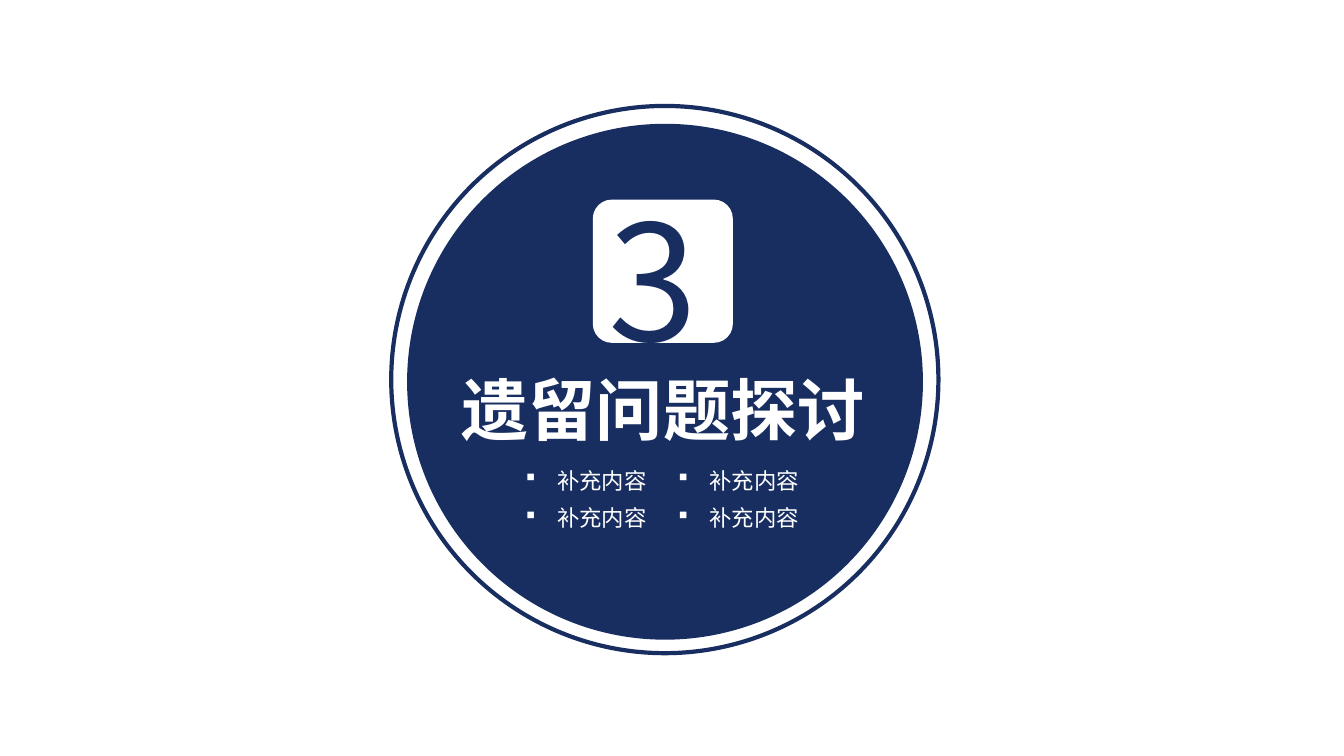
from lxml import etree
from pptx import Presentation
from pptx import util as u
from pptx.dml.color import RGBColor
from pptx.enum import shapes, text
from pptx.oxml.ns import qn

NAVY, WHITE = "182E60", "FFFFFF"
FONT = "Noto Sans CJK SC"


def colour(value):
    return RGBColor.from_string(value)


def write(box, words, wrap=True, **font_format):
    frame = box.text_frame
    frame.text = words
    frame_format = {"word_wrap": wrap, "auto_size": text.MSO_AUTO_SIZE.NONE,
                    "vertical_anchor": text.MSO_ANCHOR.MIDDLE,
                    "margin_left": u.Cm(0.25), "margin_right": u.Cm(0.25),
                    "margin_top": u.Cm(0.13), "margin_bottom": u.Cm(0.13)}
    for key, value in frame_format.items():
        setattr(frame, key, value)
    line = frame.paragraphs[0]
    line.alignment = text.PP_ALIGN.LEFT
    font = line.runs[0].font
    fill = font_format.pop("fill")
    for key, value in {"name": FONT, **font_format}.items():
        setattr(font, key, value)
    font.color.rgb = colour(fill)
    east_asian = etree.SubElement(font._element, qn("a:ea"))
    east_asian.set("typeface", FONT)
    return line


deck = Presentation()
deck.slide_width, deck.slide_height = u.Cm(33.87), u.Cm(19.05)
slide = deck.slides.add_slide(deck.slide_layouts[5])

# Ring, disc and number plate: preset, left, top, width, height, fill, line
OVAL = shapes.MSO_SHAPE.OVAL
PLATE = shapes.MSO_SHAPE.ROUNDED_RECTANGLE
badge = [
    (OVAL, 9.86, 2.67, 13.79, 13.79, None, NAVY),
    (OVAL, 10.26, 3.12, 13, 13, NAVY, None),
    (PLATE, 14.94, 5.03, 3.53, 3.61, WHITE, None),
]
for preset, left, top, width, height, fill, outline in badge:
    part = slide.shapes.add_shape(preset, u.Cm(left), u.Cm(top), u.Cm(width), u.Cm(height))
    part.shadow.inherit = False
    if fill:
        part.fill.solid()
        part.fill.fore_color.rgb = colour(fill)
    else:
        part.fill.background()
    if outline:
        part.line.color.rgb = colour(outline)
        part.line.width = u.Pt(3)
    else:
        part.line.fill.background()
    if preset == PLATE:
        part.adjustments[0] = 0.136

# Section title, brought in front of the disc
title = slide.shapes.title
title_place = {"left": 11.38, "top": 9.14, "width": 10.9, "height": 2.31}
for side, length in title_place.items():
    setattr(title, side, u.Cm(length))
write(title, "遗留问题探讨", wrap=False, size=u.Pt(48), bold=True, fill=WHITE)
title.element.getparent().append(title.element)

# Section number
number = slide.shapes.add_textbox(u.Cm(15.09), u.Cm(4.39), u.Cm(2.92), u.Cm(5.18))
write(number, "3", size=u.Pt(115), fill=NAVY)

# Two by two grid of bulleted topics
for column in range(2):
    for row in range(2):
        topic = slide.shapes.add_textbox(u.Cm(13 + 3.84 * column), u.Cm(11.63 + 0.95 * row),
                                         u.Cm(3.81), u.Cm(0.94))
        line = write(topic, "补充内容", size=u.Pt(16), fill=WHITE)
        properties = line._p.get_or_add_pPr()
        properties.set("marL", str(u.Cm(0.79)))
        properties.set("indent", str(-u.Cm(0.79)))
        etree.SubElement(properties, qn("a:buFont")).set("typeface", "Wingdings")
        etree.SubElement(properties, qn("a:buChar")).set("char", "§")

deck.save("out.pptx")
